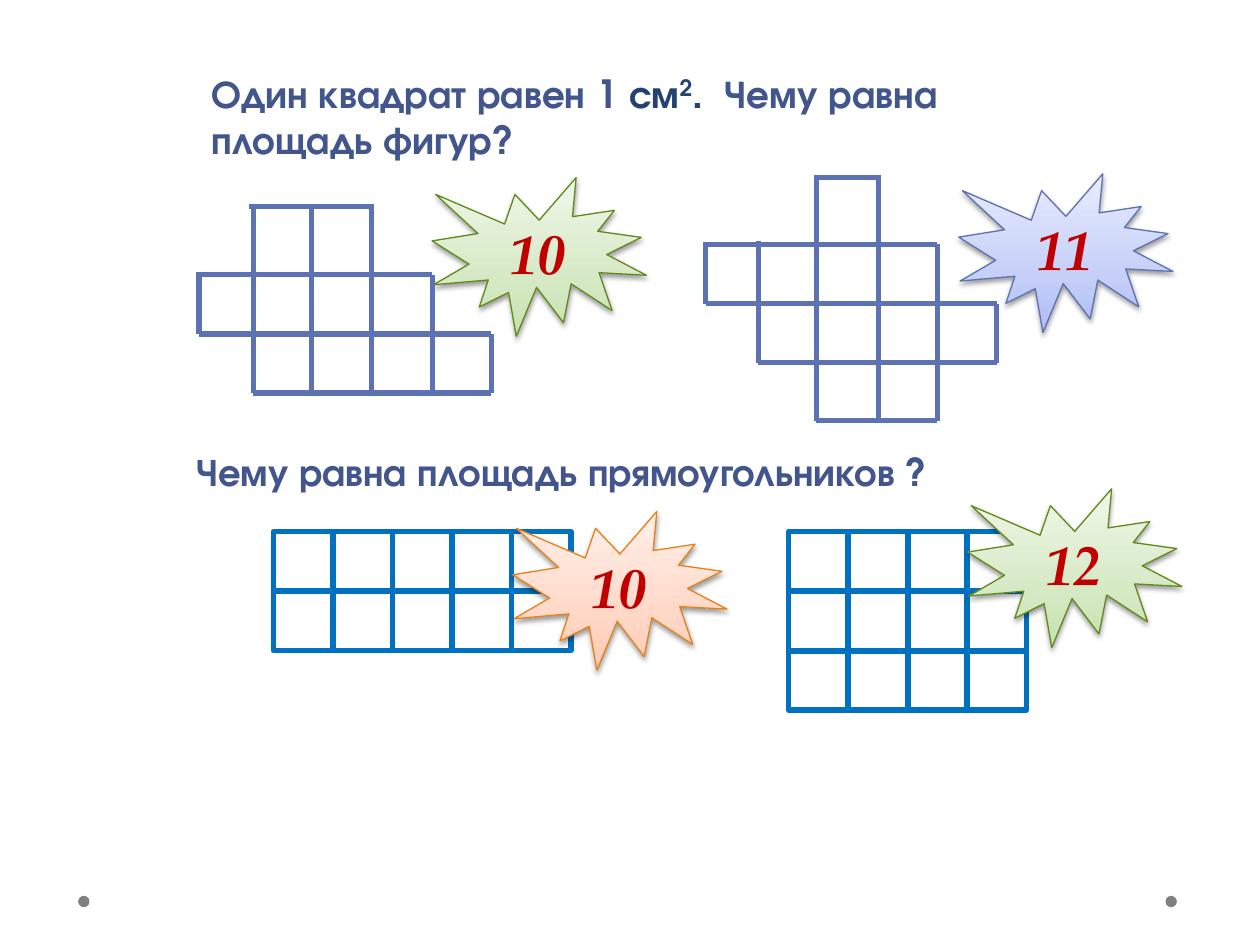
from itertools import product

from lxml import etree
from pptx import Presentation
from pptx import util as u
from pptx.dml.color import RGBColor
from pptx.enum import shapes, text
from pptx.oxml import parse_xml
from pptx.oxml.ns import qn

NAMESPACE = 'xmlns:a="http://schemas.openxmlformats.org/drawingml/2006/main"'
HEADING_FONT, ANSWER_FONT = "TeX Gyre Adventor", "TeX Gyre Pagella"
HEADING, UNIT, ANSWER = "42568D", "234271", "C00000"
FIGURE, RECTANGLE, DOT = "5C72B2", "0070C0", "808080"
GREEN = ("62891C", ("C5E1AB", "D6E9C5", "EFF7E9"))
BLUE = ("5C72B2", ("ADBBF6", "C5CFF8", "E8ECFD"))
ORANGE = ("E6811C", ("FFC9B1", "FFD8C8", "FFF0EA"))
CELL = 0.47
PITCH = 0.473

LEFT_FIGURE = {
    "columns": [(1.58, 2.16, 2.65), (2.01, 1.62, 3.12), (2.47, 1.62, 3.12),
                (2.95, 1.62, 3.12), (3.43, 2.18, 3.12), (3.9, 2.65, 3.12)],
    "rows": [(1.64, 1.98, 2.95), (2.18, 1.58, 3.43),
             (2.65, 1.58, 3.9), (3.12, 2.01, 3.9)],
}
RIGHT_FIGURE = {
    "columns": [(5.6, 1.92, 2.41), (6.02, 1.91, 2.88), (6.48, 1.39, 3.34),
                (6.97, 1.39, 3.34), (7.44, 1.94, 3.34), (7.91, 2.41, 2.88)],
    "rows": [(1.41, 6.48, 6.97), (1.94, 5.6, 7.44), (2.41, 5.6, 7.91),
             (2.88, 6.02, 7.91), (3.34, 6.48, 7.44)],
}


def color(value):
    """Turn a hex string into a colour."""
    return RGBColor.from_string(value)


def add_heading(slide, left, top, size, parts):
    """Add a bold question made of (wording, colour, raised) parts."""
    box = slide.shapes.add_textbox(
        u.Inches(left), u.Inches(top), u.Inches(7.32), u.Inches(0.71))
    frame = box.text_frame
    frame.word_wrap = True
    frame.margin_right = u.Inches(0.2)
    for wording, shade, raised in parts:
        run = frame.paragraphs[0].add_run()
        run.text = wording
        run.font.name = HEADING_FONT
        run.font.size = u.Pt(size)
        run.font.bold = True
        run.font.color.rgb = color(shade)
        if raised:
            run.font._element.set("baseline", "30000")


def add_segment(slide, start, end):
    """Draw one straight line of a figure."""
    segment = slide.shapes.add_connector(
        shapes.MSO_CONNECTOR.STRAIGHT, *map(u.Inches, (*start, *end)))
    segment.line.color.rgb = color(FIGURE)
    segment.line.width = u.Pt(3)
    etree.SubElement(segment._element.spPr, qn("a:effectLst"))


def add_figure(slide, columns, rows):
    """Draw a stepped figure from its vertical and horizontal lines."""
    for x, top, bottom in columns:
        add_segment(slide, (x, top), (x, bottom))
    for y, left, right in rows:
        add_segment(slide, (left, y), (right, y))


def add_rectangle(slide, left, top, column_count, row_count):
    """Draw a rectangle made of unit squares."""
    for row, column in product(range(row_count), range(column_count)):
        square = slide.shapes.add_shape(
            shapes.MSO_SHAPE.RECTANGLE,
            u.Inches(left + column * PITCH), u.Inches(top + row * PITCH),
            u.Inches(CELL), u.Inches(CELL))
        square.shadow.inherit = False
        square.fill.background()
        square.line.color.rgb = color(RECTANGLE)
        square.line.width = u.Pt(3)


def add_answer(slide, left, top, number, palette):
    """Add a starburst holding the area of a figure."""
    outline, tints = palette
    burst = slide.shapes.add_shape(
        shapes.MSO_SHAPE.EXPLOSION1, u.Inches(left), u.Inches(top),
        u.Inches(1.7), u.Inches(1.26))
    burst.line.color.rgb = color(outline)
    burst.line.width = u.Pt(0.75)
    stops = "".join(
        f'<a:gs pos="{place}"><a:srgbClr val="{tint}"/></a:gs>'
        for place, tint in zip((0, 35000, 100000), tints))
    properties = burst._element.spPr
    properties.find(qn("a:prstGeom")).addnext(parse_xml(
        f'<a:gradFill {NAMESPACE} rotWithShape="1"><a:gsLst>{stops}</a:gsLst>'
        '<a:lin ang="16200000" scaled="0"/></a:gradFill>'))
    properties.append(parse_xml(
        f'<a:effectLst {NAMESPACE}><a:outerShdw blurRad="{u.Pt(3.1)}" '
        f'dist="{u.Pt(1.6)}" dir="5400000" rotWithShape="0">'
        '<a:srgbClr val="000000"><a:alpha val="38000"/></a:srgbClr>'
        '</a:outerShdw></a:effectLst>'))
    frame = burst.text_frame
    frame.word_wrap = False
    frame.vertical_anchor = text.MSO_ANCHOR.MIDDLE
    paragraph = frame.paragraphs[0]
    paragraph.text = number
    paragraph.alignment = text.PP_ALIGN.CENTER
    font = paragraph.runs[0].font
    font.name = ANSWER_FONT
    font.size = u.Pt(32)
    font.bold = font.italic = True
    font.color.rgb = color(ANSWER)


def add_dot(slide, left):
    """Add a small grey dot at the foot of the slide."""
    dot = slide.shapes.add_shape(
        shapes.MSO_SHAPE.OVAL, u.Inches(left), u.Inches(7.11),
        u.Inches(0.09), u.Inches(0.09))
    dot.shadow.inherit = False
    dot.fill.solid()
    dot.fill.fore_color.rgb = color(DOT)
    dot.line.fill.background()


def main():
    """Build the slide about areas and save it."""
    deck = Presentation()
    deck.slide_width, deck.slide_height = u.Inches(10), u.Inches(7.5)
    slide = deck.slides.add_slide(deck.slide_layouts[6])
    for left in (9.25, 0.62):
        add_dot(slide, left)
    add_heading(slide, 1.58, 0.5, 22.2, [
        ("Один квадрат равен 1 ", HEADING, False),
        ("см", UNIT, False),
        ("2", UNIT, True),
        (".  ", UNIT, False),
        ("Чему равна площадь фигур?", HEADING, False)])
    add_answer(slide, 3.43, 1.41, "10", GREEN)
    add_answer(slide, 7.61, 1.38, "11", BLUE)
    add_figure(slide, **LEFT_FIGURE)
    add_figure(slide, **RIGHT_FIGURE)
    add_heading(slide, 1.46, 3.51, 22,
                [("Чему равна площадь прямоугольников ?", HEADING, False)])
    add_rectangle(slide, 2.17, 4.22, 5, 2)
    add_rectangle(slide, 6.26, 4.22, 4, 3)
    add_answer(slide, 4.07, 4.06, "10", ORANGE)
    add_answer(slide, 7.68, 3.88, "12", GREEN)
    deck.save("out.pptx")


if __name__ == "__main__":
    main()
